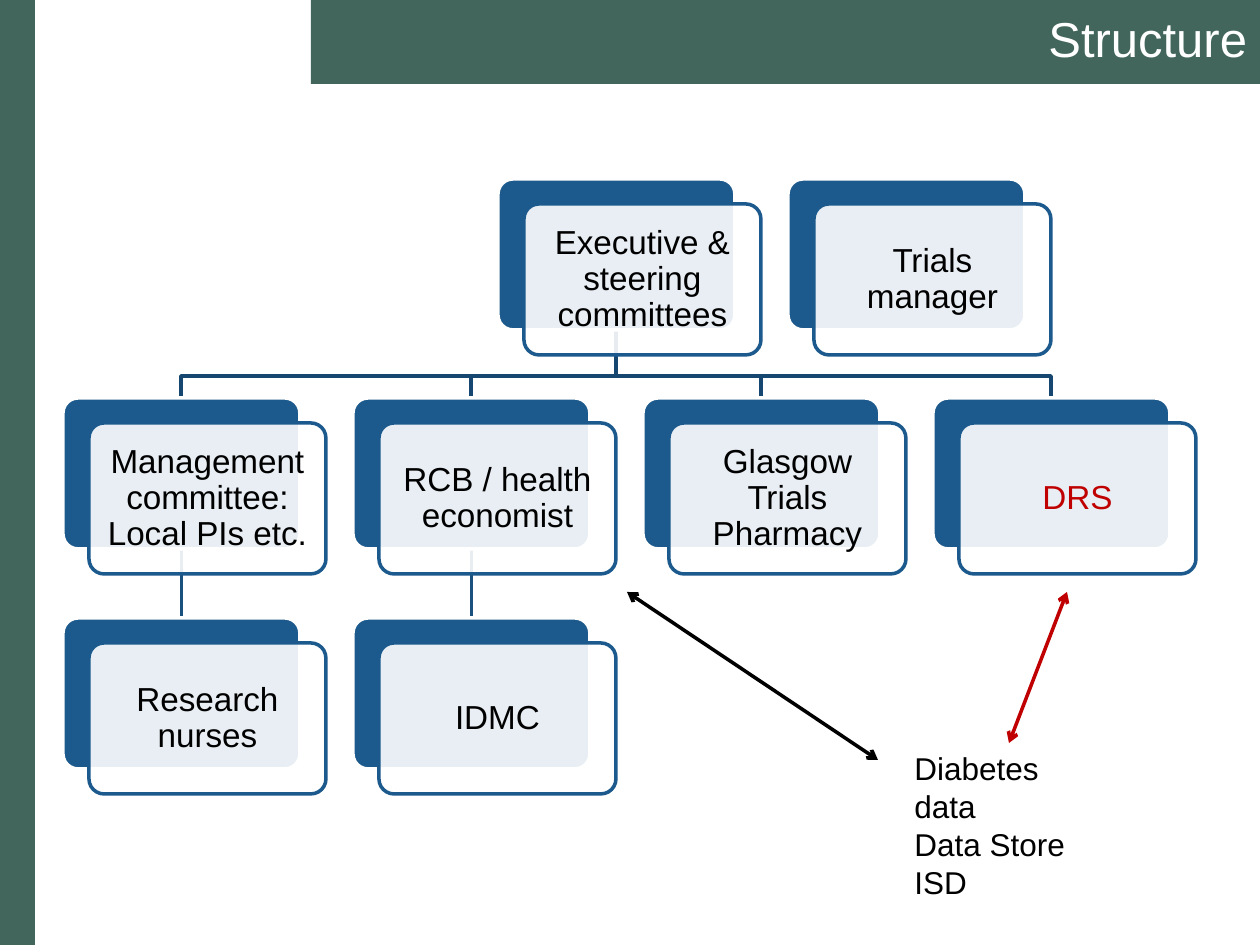
from lxml.etree import SubElement
from pptx import Presentation
from pptx.dml.color import RGBColor
from pptx.enum.shapes import MSO_CONNECTOR, MSO_SHAPE
from pptx.enum.text import MSO_ANCHOR, PP_ALIGN
from pptx.oxml.ns import qn
from pptx.util import Emu, Pt

EMU_PER_PX = 914400 / 126
GREEN, BLUE, WHITE, BLACK, RED = "42665C", "1C598C", "FFFFFF", "000000", "C00000"
BRANCH_BLUE, LINK_BLUE = "164770", "19517F"
CARD_W, CARD_H = 237, 151
COLUMN_LEFT, COLUMN_PITCH = 63, 290
ROW_TOPS = [179, 398, 618]
FRONT_DX, FRONT_DY = 26, 25
BRANCH_Y = 376

CARDS = {
    "executive": (1.5, 0, "Executive & steering committees", BLACK),
    "manager": (2.5, 0, "Trials manager", BLACK),
    "management": (0, 1, "Management committee: Local PIs etc.", BLACK),
    "economist": (1, 1, "RCB / health economist", BLACK),
    "pharmacy": (2, 1, "Glasgow Trials Pharmacy", BLACK),
    "drs": (3, 1, "DRS", RED),
    "nurses": (0, 2, "Research nurses", BLACK),
    "idmc": (1, 2, "IDMC", BLACK),
}
BRANCHES = ["management", "economist", "pharmacy", "drs"]
LINKS = [("management", "nurses"), ("economist", "idmc")]


def px(length):
    """Turn pixels into EMU."""
    return Emu(round(length * EMU_PER_PX))


def color(code):
    """Turn a hex string into a colour."""
    return RGBColor.from_string(code)


def set_line(line, code):
    """Give a line its colour and the common width."""
    line.color.rgb = color(code)
    line.width = Pt(2)


def add_block(slide, kind, box, fill, outline=None):
    """Add a filled preset shape."""
    block = slide.shapes.add_shape(kind, *map(px, box))
    block.shadow.inherit = False
    block.fill.solid()
    block.fill.fore_color.rgb = color(fill)
    if outline:
        set_line(block.line, outline)
    else:
        block.line.fill.background()
    return block


def write(frame, lines, size, code, align, spacing=None):
    """Fill a text frame with one paragraph per line."""
    frame.word_wrap = True
    for index, line in enumerate(lines):
        paragraph = frame.add_paragraph() if index else frame.paragraphs[0]
        paragraph.text = line
        paragraph.alignment = align
        paragraph.line_spacing = spacing
        paragraph.font.name = "Arial"
        paragraph.font.size = Pt(size)
        paragraph.font.color.rgb = color(code)


def set_margins(frame, left, top, right, bottom):
    """Set the inner margins and centre the text vertically."""
    frame.margin_left, frame.margin_top = px(left), px(top)
    frame.margin_right, frame.margin_bottom = px(right), px(bottom)
    frame.vertical_anchor = MSO_ANCHOR.MIDDLE


def card_origin(name):
    """Return the left and top of a card on the grid."""
    column, row = CARDS[name][:2]
    return round(COLUMN_LEFT + column * COLUMN_PITCH), ROW_TOPS[row]


def add_back(slide, name):
    """Add the solid rear panel of a card."""
    box = (*card_origin(name), CARD_W, CARD_H)
    back = add_block(slide, MSO_SHAPE.ROUNDED_RECTANGLE, box, BLUE, WHITE)
    back.adjustments[0] = 0.1
    return back


def add_front(slide, name):
    """Add the translucent front panel of a card with its label."""
    left, top = card_origin(name)
    box = (left + FRONT_DX, top + FRONT_DY, CARD_W, CARD_H)
    front = add_block(slide, MSO_SHAPE.ROUNDED_RECTANGLE, box, WHITE, BLUE)
    front.adjustments[0] = 0.1
    fill = front.fill._xPr.find(qn("a:solidFill"))
    SubElement(fill[0], qn("a:alpha"), val="90000")
    label, code = CARDS[name][2:]
    set_margins(front.text_frame, 10, 10, 10, 10)
    write(front.text_frame, [label], 19, code, PP_ALIGN.CENTER, 0.9)


def add_branch(slide, parent, child):
    """Add a bent line from a parent card down to a child card."""
    (parent_x, parent_y), (child_x, child_y) = card_origin(parent), card_origin(child)
    start_x, end_x = parent_x + CARD_W // 2, child_x + CARD_W // 2
    builder = slide.shapes.build_freeform(start_x, parent_y + CARD_H, scale=EMU_PER_PX)
    bends = [(start_x, BRANCH_Y), (end_x, BRANCH_Y), (end_x, child_y)]
    builder.add_line_segments(bends, close=False)
    branch = builder.convert_to_shape()
    branch.shadow.inherit = False
    branch.fill.background()
    set_line(branch.line, BRANCH_BLUE)
    return branch


def add_line(slide, start, end, code, arrows=False):
    """Add a straight line, with arrowheads at both ends if asked."""
    points = map(px, (*start, *end))
    line = slide.shapes.add_connector(MSO_CONNECTOR.STRAIGHT, *points)
    set_line(line.line, code)
    if arrows:
        for tip in ("a:headEnd", "a:tailEnd"):
            SubElement(line.line._get_or_add_ln(), qn(tip), type="arrow")
    SubElement(line._element.spPr, qn("a:effectLst"))
    return line


def add_link(slide, upper, lower):
    """Join the bottom of one panel to the top of another."""
    link = add_line(slide, (0, 0), (0, 0), LINK_BLUE)
    link.begin_connect(upper, 2)
    link.end_connect(lower, 0)
    return link


def add_chart_of_roles(slide):
    """Add the cards with their lines behind them."""
    backs = {name: add_back(slide, name) for name in CARDS}
    lines = [add_branch(slide, "executive", child) for child in BRANCHES]
    lines += [add_link(slide, backs[upper], backs[lower]) for upper, lower in LINKS]
    for line in lines:
        backs["executive"]._element.addprevious(line._element)
    for name in CARDS:
        add_front(slide, name)


def main():
    """Build the slide and save it."""
    deck = Presentation()
    deck.slide_width, deck.slide_height = px(1260), px(945)
    slide = deck.slides.add_slide(deck.slide_layouts[6])

    add_block(slide, MSO_SHAPE.RECTANGLE, (0, 0, 35, 945), GREEN)
    banner = add_block(slide, MSO_SHAPE.RECTANGLE, (311, 0, 949, 84), GREEN)
    set_margins(banner.text_frame, 10, 5, 13, 5)
    write(banner.text_frame, ["Structure"], 28, WHITE, PP_ALIGN.RIGHT, 0.9)

    add_chart_of_roles(slide)

    sources = slide.shapes.add_textbox(*map(px, (902, 743, 215, 127)))
    write(sources.text_frame, ["Diabetes data", "Data Store", "ISD"], 18, BLACK, PP_ALIGN.LEFT)
    add_line(slide, (627, 592), (878, 760), BLACK, arrows=True)
    add_line(slide, (1067, 592), (1009, 743), RED, arrows=True)

    deck.save("out.pptx")


if __name__ == "__main__":
    main()
